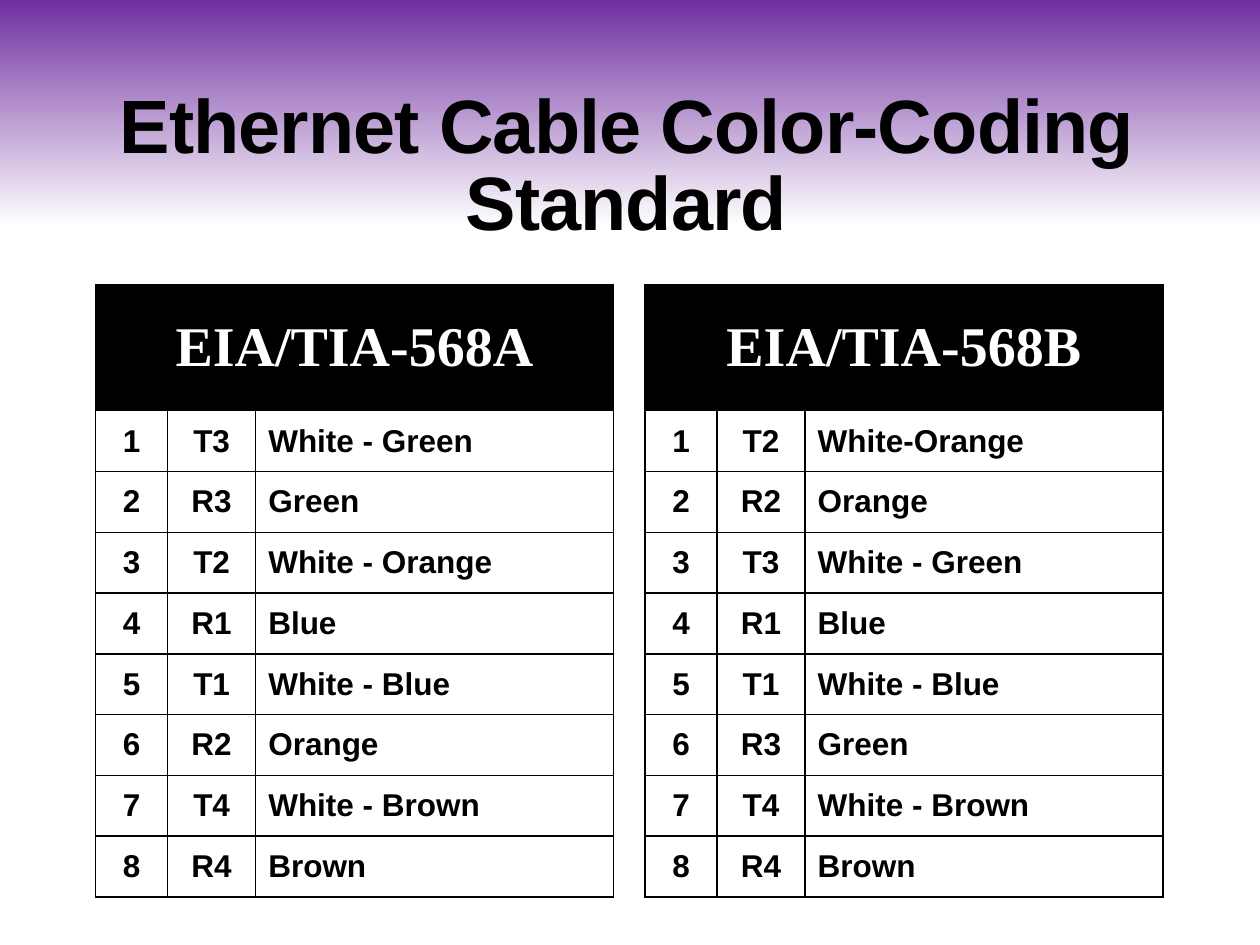
from lxml.etree import SubElement
from pptx import Presentation
from pptx.dml.color import RGBColor
from pptx.enum.text import MSO_ANCHOR as Anchor, PP_ALIGN as Align
from pptx.oxml.ns import qn
from pptx.util import Inches, Pt

TITLE = "Ethernet Cable Color-Coding Standard"
STANDARDS = [
    ("EIA/TIA-568A", [
        ("T3", "White - Green"), ("R3", "Green"),
        ("T2", "White - Orange"), ("R1", "Blue"),
        ("T1", "White - Blue"), ("R2", "Orange"),
        ("T4", "White - Brown"), ("R4", "Brown"),
    ]),
    ("EIA/TIA-568B", [
        ("T2", "White-Orange"), ("R2", "Orange"),
        ("T3", "White - Green"), ("R1", "Blue"),
        ("T1", "White - Blue"), ("R3", "Green"),
        ("T4", "White - Brown"), ("R4", "Brown"),
    ]),
]
BLACK, WHITE, PURPLE = "000000", "FFFFFF", "7030A0"
COLUMN_WIDTHS = [0.57, 0.7, 2.84]
HEADER_HEIGHT, WIRE_HEIGHT = 1, 0.4825
LEFT, TOP, GAP = 0.76, 2.26, 0.25


def rgb(color):
    return RGBColor.from_string(color)


def set_font(paragraph, name, size, color):
    font = paragraph.font
    font.name, font.size, font.bold = name, Pt(size), True
    font.color.rgb = rgb(color)


def add_borders(cell):
    properties = cell._tc.get_or_add_tcPr()
    for position, side in enumerate(("lnL", "lnR", "lnT", "lnB")):
        line = properties.makeelement(qn(f"a:{side}"), {"w": str(Pt(1))})
        fill = SubElement(line, qn("a:solidFill"))
        SubElement(fill, qn("a:srgbClr"), val=BLACK)
        properties.insert(position, line)


def fill_cell(cell, text, font_name, size, color, background, align):
    cell.text = text
    cell.vertical_anchor = Anchor.MIDDLE
    cell.fill.solid()
    cell.fill.fore_color.rgb = rgb(background)
    paragraph = cell.text_frame.paragraphs[0]
    paragraph.alignment = align
    set_font(paragraph, font_name, size, color)
    add_borders(cell)


def add_standard(slide, left, name, wires):
    height = HEADER_HEIGHT + WIRE_HEIGHT * len(wires)
    table = slide.shapes.add_table(
        len(wires) + 1, len(COLUMN_WIDTHS), Inches(left), Inches(TOP),
        Inches(sum(COLUMN_WIDTHS)), Inches(height)).table
    table.horz_banding = False
    for column, width in zip(table.columns, COLUMN_WIDTHS):
        column.width = Inches(width)
    for number, row in enumerate(table.rows):
        row.height = Inches(WIRE_HEIGHT if number else HEADER_HEIGHT)

    table.cell(0, 0).merge(table.cell(0, 2))
    for column in range(len(COLUMN_WIDTHS)):
        fill_cell(table.cell(0, column), "" if column else name,
                  "Times New Roman", 32, WHITE, BLACK, Align.CENTER)
    for pin, (pair, color_name) in enumerate(wires, 1):
        for column, text in enumerate((str(pin), pair, color_name)):
            align = Align.LEFT if column == 2 else Align.CENTER
            fill_cell(table.cell(pin, column), text,
                      "Arial", 18, BLACK, WHITE, align)


def main():
    deck = Presentation()
    deck.slide_width, deck.slide_height = Inches(10), Inches(7.5)
    slide = deck.slides.add_slide(deck.slide_layouts[5])

    backdrop = slide.background.fill
    backdrop.gradient()
    backdrop.gradient_angle = 270
    stops = [(0, PURPLE), (0.24, WHITE)]
    for stop, (position, color) in zip(backdrop.gradient_stops, stops):
        stop.position = position
        stop.color.rgb = rgb(color)

    title = slide.shapes.title
    title.left, title.top = Inches(0.73), Inches(0.55)
    title.width, title.height = Inches(8.48), Inches(1.45)
    title.text_frame.text = TITLE
    title.text_frame.vertical_anchor = Anchor.BOTTOM
    heading = title.text_frame.paragraphs[0]
    heading.alignment = Align.CENTER
    heading.line_spacing = 0.85
    set_font(heading, "Arial", 43.2, BLACK)
    heading.runs[0].font._element.set("spc", "-50")

    for index, (name, wires) in enumerate(STANDARDS):
        left = LEFT + index * (sum(COLUMN_WIDTHS) + GAP)
        add_standard(slide, left, name, wires)

    deck.save("out.pptx")


if __name__ == "__main__":
    main()
